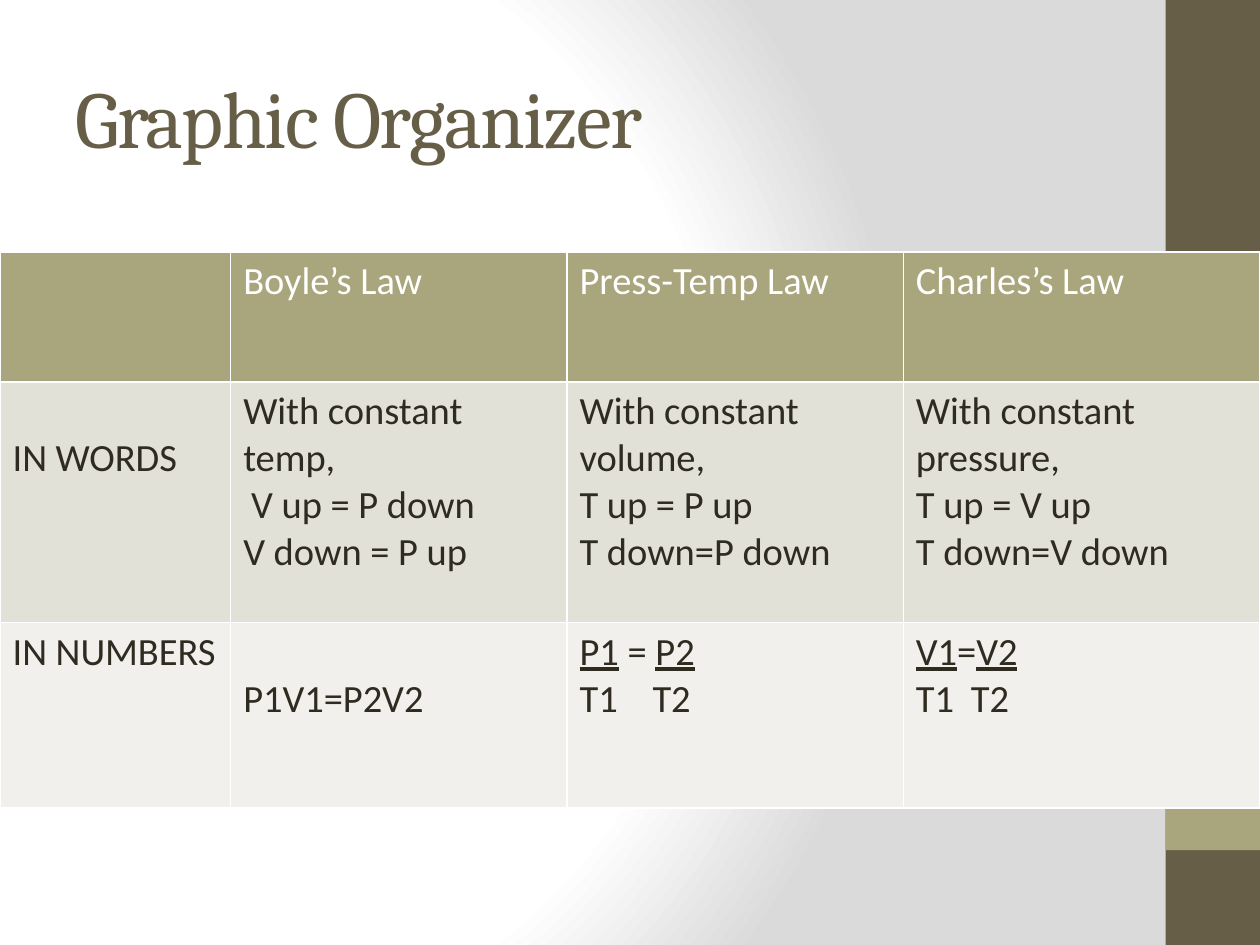
from lxml.etree import SubElement
from pptx import Presentation
from pptx.dml.color import RGBColor
from pptx.enum.shapes import MSO_SHAPE
from pptx.enum.text import MSO_ANCHOR, MSO_AUTO_SIZE, PP_ALIGN
from pptx.oxml import parse_xml
from pptx.oxml.ns import nsdecls, qn
from pptx.util import Cm, Pt

# Content: a cell is a list of paragraphs, a paragraph a list of (text, underlined) runs
TITLE = "Graphic Organizer"


def lines(*texts):
    return [[(text, False)] for text in texts]


def fraction(left, equals, right):
    return [[(left, True), (equals, False), (right, True)], [("T1\tT2", False)]]


ROWS = [
    [[], lines("Boyle’s Law"), lines("Press-Temp Law"), lines("Charles’s Law")],
    [
        lines("IN WORDS"),
        lines("With constant temp,", "V up = P down", "V down = P up"),
        lines("With constant volume,", "T up = P up", "T down=P down"),
        lines("With constant pressure,", "T up = V up", "T down=V down"),
    ],
    [
        lines("IN NUMBERS"),
        lines("P1V1=P2V2"),
        fraction("P1", " = ", "P2"),
        fraction("V1", "=", "V2"),
    ],
]

# Layout and colours, lengths in centimetres
COLUMN_WIDTHS = [4.65, 6.78, 6.78, 7.19]
ROW_HEIGHTS = [2.62, 4.85, 3.74]
ROW_COLORS = [("A9A57C", "FFFFFF"), ("E2E1D7", "2F2B20"), ("F1F0EC", "2F2B20")]
LOWERED_CELLS = [(1, 0), (2, 1)]
LOWERED_MARGIN = 1.07
INDENTS = {(1, 1, 1): 0.16}
TAB_STOPS = {(2, 2): 1.47, (2, 3): 1.11}
SIDE_BARS = [(0, 19.05, "675E47"), (15.24, 1.9, "A9A57C")]


def color(hex_string):
    return RGBColor.from_string(hex_string)


def format_run(run, font_name, size, hex_string):
    run.font.name = font_name
    run.font.size = Pt(size)
    run.font.bold = False
    run.font.color.rgb = color(hex_string)


def set_background(slide):
    slide.background.fill.solid()
    solid = slide.element.find(".//" + qn("p:bgPr")).find(qn("a:solidFill"))
    stops = "".join(
        f'<a:gs pos="{position}"><a:srgbClr val="{value}"/></a:gs>'
        for position, value in [(0, "FFFFFF"), (75000, "FFFFFF"), (100000, "DADADA")]
    )
    gradient = parse_xml(
        f'<a:gradFill {nsdecls("a")} rotWithShape="1"><a:gsLst>{stops}</a:gsLst>'
        '<a:path path="circle"><a:fillToRect l="20000" t="50000" r="100000" b="50000"/>'
        "</a:path></a:gradFill>"
    )
    solid.getparent().replace(solid, gradient)


def set_borders(cell):
    properties = cell._tc.get_or_add_tcPr()
    for index, side in enumerate(["lnL", "lnR", "lnT", "lnB"]):
        border = parse_xml(
            f'<a:{side} {nsdecls("a")} w="12700"><a:solidFill>'
            f'<a:srgbClr val="FFFFFF"/></a:solidFill></a:{side}>'
        )
        properties.insert(index, border)


def set_paragraph_layout(paragraph, indent, tab_stop):
    properties = paragraph._p.get_or_add_pPr()
    if indent:
        properties.set("marL", str(Cm(indent)))
    if tab_stop:
        tab_list = SubElement(properties, qn("a:tabLst"))
        SubElement(tab_list, qn("a:tab"), pos=str(Cm(tab_stop)), algn="l")


def fill_cell(cell, paragraphs, row, column):
    fill_color, text_color = ROW_COLORS[row]
    cell.fill.solid()
    cell.fill.fore_color.rgb = color(fill_color)
    set_borders(cell)
    if (row, column) in LOWERED_CELLS:
        cell.margin_top = Cm(LOWERED_MARGIN)
    for index, runs in enumerate(paragraphs):
        frame = cell.text_frame
        paragraph = frame.paragraphs[0] if index == 0 else frame.add_paragraph()
        set_paragraph_layout(
            paragraph, INDENTS.get((row, column, index)), TAB_STOPS.get((row, column))
        )
        for text, underlined in runs:
            run = paragraph.add_run()
            run.text = text
            format_run(run, "Calibri", 22, text_color)
            run.font.underline = underlined


def add_title(slide):
    title = slide.shapes.title
    title.left, title.top, title.width, title.height = Cm(1.27), Cm(0.76), Cm(21.16), Cm(3.18)
    frame = title.text_frame
    frame.vertical_anchor = MSO_ANCHOR.MIDDLE
    frame.auto_size = MSO_AUTO_SIZE.NONE
    paragraph = frame.paragraphs[0]
    paragraph.alignment = PP_ALIGN.LEFT
    run = paragraph.add_run()
    run.text = TITLE
    format_run(run, "Cambria", 46, "675E47")
    run.font._element.set("spc", "-100")


def add_side_bars(slide):
    for top, height, hex_string in SIDE_BARS:
        bar = slide.shapes.add_shape(
            MSO_SHAPE.RECTANGLE, Cm(23.5), Cm(top), Cm(1.9), Cm(height)
        )
        bar.shadow.inherit = False
        bar.fill.solid()
        bar.fill.fore_color.rgb = color(hex_string)
        bar.line.fill.background()


def add_law_table(slide):
    table = slide.shapes.add_table(
        len(ROWS), len(COLUMN_WIDTHS), Cm(0), Cm(5.08),
        Cm(sum(COLUMN_WIDTHS)), Cm(sum(ROW_HEIGHTS)),
    ).table
    for column, width in zip(table.columns, COLUMN_WIDTHS):
        column.width = Cm(width)
    for row, height in zip(table.rows, ROW_HEIGHTS):
        row.height = Cm(height)
    for row, cells in enumerate(ROWS):
        for column, paragraphs in enumerate(cells):
            fill_cell(table.cell(row, column), paragraphs, row, column)


def main():
    presentation = Presentation()
    presentation.slide_width, presentation.slide_height = Cm(25.4), Cm(19.05)
    slide = presentation.slides.add_slide(presentation.slide_layouts[5])
    set_background(slide)
    add_side_bars(slide)
    add_title(slide)
    add_law_table(slide)
    presentation.save("out.pptx")


if __name__ == "__main__":
    main()
